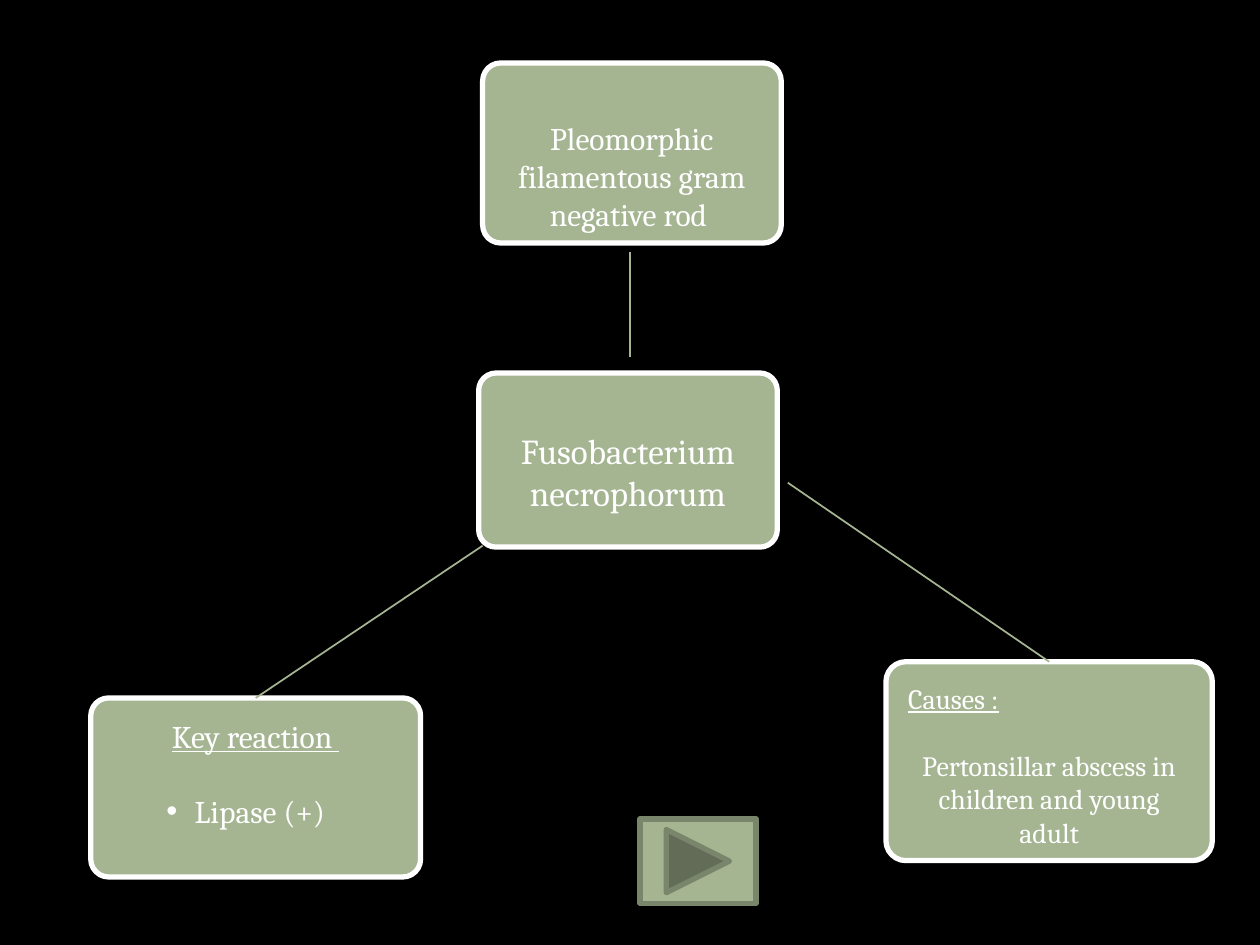
"""Build a concept map slide about Fusobacterium necrophorum."""
import lxml.etree
import pptx
import pptx.dml.color
import pptx.enum.shapes
import pptx.enum.text
import pptx.oxml.ns
import pptx.util

Cm = pptx.util.Cm
Pt = pptx.util.Pt
qn = pptx.oxml.ns.qn
SAGE, WHITE, BLACK, MOSS = "A5B592", "FFFFFF", "000000", "7A866C"
LEFT = pptx.enum.text.PP_ALIGN.LEFT
CENTER = pptx.enum.text.PP_ALIGN.CENTER
SHAPES = pptx.enum.shapes.MSO_SHAPE


def paint(format_part, color):
    if hasattr(format_part, "solid"):
        format_part.solid()
        format_part.fore_color.rgb = pptx.dml.color.RGBColor.from_string(color)
    else:
        format_part.color.rgb = pptx.dml.color.RGBColor.from_string(color)


def add_box(preset, left, top, width, height, line_color):
    shape = slide.shapes.add_shape(preset, Cm(left), Cm(top), Cm(width), Cm(height))
    shape.shadow.inherit = False
    paint(shape.fill, SAGE)
    paint(shape.line, line_color)
    shape.line.width = Pt(3)
    return shape


presentation = pptx.Presentation()
presentation.slide_width = Cm(25.4)
presentation.slide_height = Cm(19.05)
slide = presentation.slides.add_slide(presentation.slide_layouts[6])
paint(slide.background.fill, BLACK)

boxes = [
    ("species", (9.65, 7.52, 6.02, 3.51), 1.03, 20, 0,
     [("Fusobacterium", CENTER, False), ("necrophorum", CENTER, False)]),
    ("reaction", (1.83, 14.07, 6.65, 3.61), 0.28, 18, 21,
     [("Key reaction ", CENTER, True), ("Lipase (+)", CENTER, False)]),
    ("causes", (17.86, 13.34, 6.58, 4.01), 0.28, 16, 19,
     [("Causes :", LEFT, True),
      ("Pertonsillar abscess in children and young adult", CENTER, False)]),
    ("morphology", (9.73, 1.27, 6.02, 3.63), 1.03, 18, 0,
     [("Pleomorphic filamentous gram", CENTER, False), ("negative rod ", CENTER, False)]),
]
shapes = {}
for name, place, top_inset, size, gap, lines in boxes:
    shape = add_box(SHAPES.ROUNDED_RECTANGLE, *place, WHITE)
    shape.adjustments[0] = 0.1
    shapes[name] = shape
    frame = shape.text_frame
    frame.word_wrap = True
    frame.vertical_anchor = pptx.enum.text.MSO_ANCHOR.TOP
    frame.margin_left = frame.margin_right = Cm(0.33)
    frame.margin_top, frame.margin_bottom = Cm(top_inset), Cm(0)
    for index, (text, alignment, underlined) in enumerate(lines):
        paragraph = frame.add_paragraph() if index else frame.paragraphs[0]
        paragraph.alignment = alignment
        if index:
            paragraph.space_before = Pt(gap)
        run = paragraph.add_run()
        run.text = text
        run.font.name = "Cambria"
        run.font.size = Pt(size)
        run.font.underline = underlined
        paint(run.font, WHITE) if hasattr(run.font, "solid") else paint(run.font.fill, WHITE)

properties = shapes["reaction"].text_frame.paragraphs[1]._p.get_or_add_pPr()
for key, value in (("marL", 0.57), ("marR", 0.4), ("indent", -0.57)):
    properties.set(key, str(int(Cm(value))))
lxml.etree.SubElement(properties, qn("a:buFont")).set("typeface", "Arial")
lxml.etree.SubElement(properties, qn("a:buChar")).set("char", "•")

links = [
    ((12.7, 5.08, 12.7, 7.19), None),
    ((9.73, 11, 5.15, 14.07), "reaction"),
    ((15.88, 9.73, 21.15, 13.34), "causes"),
]
for ends, target in links:
    connector = slide.shapes.add_connector(
        pptx.enum.shapes.MSO_CONNECTOR.STRAIGHT, *(Cm(value) for value in ends))
    paint(connector.line, SAGE)
    connector.line.width = Pt(1)
    lxml.etree.SubElement(connector._element.spPr, qn("a:effectLst"))
    if target:
        connector.end_connect(shapes[target], 0)

add_box(SHAPES.ACTION_BUTTON_FORWARD_OR_NEXT, 12.9, 16.51, 2.34, 1.7, MOSS)

presentation.save("out.pptx")
